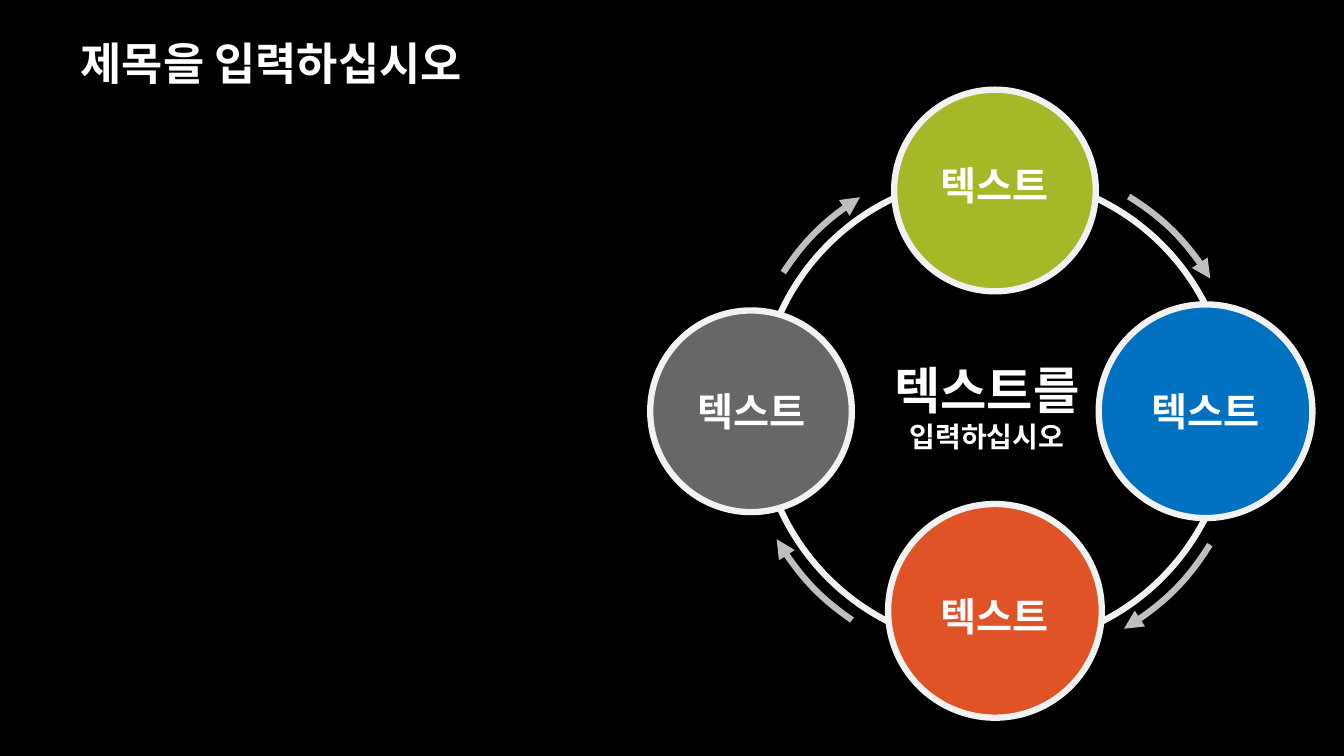
from typing import NamedTuple

from lxml.etree import SubElement
from pptx import Presentation
from pptx.dml.color import RGBColor
from pptx.enum.shapes import MSO_SHAPE as Preset
from pptx.enum.text import MSO_ANCHOR as Anchor, MSO_AUTO_SIZE as AutoSize, PP_ALIGN as Align
from pptx.oxml.ns import qn
from pptx.util import Inches, Pt

BLACK = RGBColor(0x00, 0x00, 0x00)
WHITE = RGBColor(0xFF, 0xFF, 0xFF)
OUTLINE = RGBColor(0xF2, 0xF2, 0xF2)
ARROW = RGBColor(0xBF, 0xBF, 0xBF)
GREEN = RGBColor(0xA6, 0xB7, 0x27)
ORANGE = RGBColor(0xDF, 0x53, 0x27)
BLUE = RGBColor(0x00, 0x70, 0xC0)
GREY = RGBColor(0x67, 0x67, 0x67)

FONT = "Calibri"
SLIDE_WIDTH = Inches(13.333)
SLIDE_HEIGHT = Inches(7.5)
LINE_WIDTH = Pt(4.5)
ARC_UNITS_PER_DEGREE = 0.6
CENTER_X, CENTER_Y = 74.03, 54.4
RING_DIAMETER = 62.4
ARROW_DIAMETER = 66.93


class Stage(NamedTuple):
    x: float
    y: float
    diameter: float
    label_y: float
    color: RGBColor


class Arrow(NamedTuple):
    start: float
    end: float


STAGES = [
    Stage(CENTER_X, 25.2, 26.67, 24.47, GREEN),
    Stage(CENTER_X, 80.8, 28.27, 81.53, ORANGE),
    Stage(89.7, CENTER_Y, 28.27, 54.33, BLUE),
    Stage(55.88, CENTER_Y, 26.67, 54.33, GREY),
]
ARROWS = [
    Arrow(301.94, 328.35),
    Arrow(124.38, 149.6),
    Arrow(213.25, 237.77),
    Arrow(31.82, 59.32),
]


def across(percent: float) -> int:
    return round(SLIDE_WIDTH * percent / 100)


def down(percent: float) -> int:
    return round(SLIDE_HEIGHT * percent / 100)


def add_round(shapes, preset: Preset, x: float, y: float, diameter: float, line_color: RGBColor):
    size = down(diameter)
    shape = shapes.add_shape(preset, across(x) - size // 2, down(y) - size // 2, size, size)
    shape.shadow.inherit = False
    shape.fill.background()
    shape.line.color.rgb = line_color
    shape.line.width = LINE_WIDTH
    return shape


def format_runs(paragraph, size: float) -> None:
    for run in paragraph.runs:
        run.font.name = FONT
        run.font.size = Pt(size)
        run.font.bold = True
        run.font.color.rgb = WHITE


def add_text(shapes, text: str, x: float, y: float, width: float, height: float,
             sizes: list[float]) -> None:
    box = shapes.add_textbox(across(x - width / 2), down(y - height / 2), across(width), down(height))
    frame = box.text_frame
    frame.text = text
    frame.word_wrap = False
    frame.auto_size = AutoSize.SHAPE_TO_FIT_TEXT
    for paragraph, size in zip(frame.paragraphs, sizes):
        paragraph.alignment = Align.CENTER
        format_runs(paragraph, size)


def add_stage(slide, stage: Stage) -> None:
    group = slide.shapes.add_group_shape()
    circle = add_round(group.shapes, Preset.OVAL, stage.x, stage.y, stage.diameter, OUTLINE)
    circle.fill.solid()
    circle.fill.fore_color.rgb = stage.color
    add_text(group.shapes, "텍스트", stage.x, stage.label_y, 10.35, 7.6, [28])


def add_arrow(shapes, arrow: Arrow) -> None:
    arc = add_round(shapes, Preset.ARC, CENTER_X, CENTER_Y, ARROW_DIAMETER, ARROW)
    for index, angle in enumerate(arrow):
        arc.adjustments[index] = angle * ARC_UNITS_PER_DEGREE
    SubElement(arc.line._get_or_add_ln(), qn("a:tailEnd"), type="triangle")


def fill_title(title) -> None:
    title.left, title.top = across(5.25), down(2.67)
    title.width, title.height = across(89.25), down(12)
    frame = title.text_frame
    frame.text = "제목을 입력하십시오"
    frame.auto_size = AutoSize.NONE
    frame.vertical_anchor = Anchor.MIDDLE
    paragraph = frame.paragraphs[0]
    paragraph.alignment = Align.LEFT
    paragraph.line_spacing = 0.9
    format_runs(paragraph, 32)


def main() -> None:
    presentation = Presentation()
    presentation.slide_width = SLIDE_WIDTH
    presentation.slide_height = SLIDE_HEIGHT
    slide = presentation.slides.add_slide(presentation.slide_layouts[5])
    slide.background.fill.solid()
    slide.background.fill.fore_color.rgb = BLACK

    fill_title(slide.shapes.title)
    add_round(slide.shapes, Preset.OVAL, CENTER_X, CENTER_Y, RING_DIAMETER, OUTLINE)
    for stage in STAGES:
        add_stage(slide, stage)
    add_text(slide.shapes, "텍스트를\n입력하십시오", 73.43, 53.73, 16.65, 13.87, [36, 20])
    arrows = slide.shapes.add_group_shape()
    for arrow in ARROWS:
        add_arrow(arrows.shapes, arrow)

    presentation.save("out.pptx")


if __name__ == "__main__":
    main()
